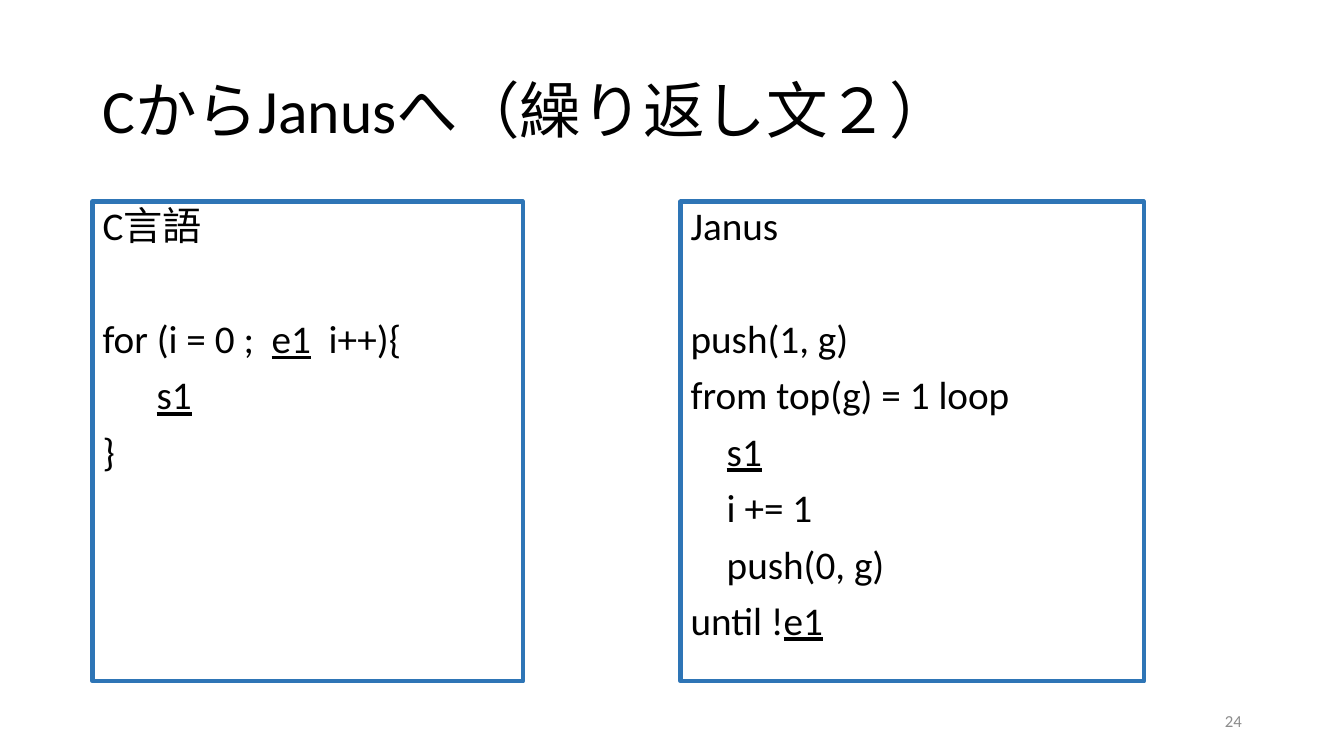
from lxml.etree import SubElement
from pptx import Presentation
from pptx.dml.color import RGBColor
from pptx.enum.text import MSO_ANCHOR as Anchor, MSO_AUTO_SIZE as AutoSize, PP_ALIGN as Align
from pptx.oxml.ns import qn
from pptx.util import Cm, Pt

FONT = "Calibri"
BLACK, BLUE, GREY = "000000", "2E75B6", "8C8C8C"
TWO_CONTENT_LAYOUT = 3
PANEL_TOP, PANEL_HEIGHT = 5.08, 12.09
CODE_GAP = 50.5

C_LINES = [
    ("for (i = 0 ;  _e1_  i++){", 0),
    ("_s1_", 1.36),
    ("}", 0),
]
JANUS_LINES = [
    ("push(1, g)", 0),
    ("from top(g) = 1 loop", 0),
    ("_s1_", 0.91),
    ("i += 1", 0.91),
    ("push(0, g)", 0.91),
    ("until !_e1_", 0),
]


def color(hex_string):
    return RGBColor.from_string(hex_string)


def place(shape, left, top, width, height):
    shape.left, shape.top = Cm(left), Cm(top)
    shape.width, shape.height = Cm(width), Cm(height)


def write(paragraph, text, size=28, fill=BLACK, align=Align.LEFT, before=0, spacing=0.9):
    paragraph.alignment = align
    paragraph.line_spacing = spacing
    paragraph.space_before = Pt(before)
    for position, part in enumerate(text.split("_")):
        if part:
            run = paragraph.add_run()
            run.text = part
            run.font.name = FONT
            run.font.size = Pt(size)
            run.font.color.rgb = color(fill)
            run.font.underline = position % 2 == 1


def remove_bullet(paragraph, indent):
    properties = paragraph._p.get_or_add_pPr()
    properties.set("marL", str(Cm(indent)))
    properties.set("indent", "0")
    SubElement(properties, qn("a:buNone"))


def set_frame(shape, anchor):
    frame = shape.text_frame
    frame.word_wrap = True
    frame.auto_size = AutoSize.NONE
    frame.vertical_anchor = anchor
    return frame


def add_title(slide, text):
    title = slide.shapes.title
    place(title, 2.33, 1.01, 29.21, 3.68)
    write(set_frame(title, Anchor.MIDDLE).paragraphs[0], text, size=44)


def add_code_panel(placeholder, left, width, heading, lines):
    place(placeholder, left, PANEL_TOP, width, PANEL_HEIGHT)
    placeholder.line.color.rgb = color(BLUE)
    placeholder.line.width = Pt(3)
    frame = set_frame(placeholder, Anchor.TOP)
    for number, (text, indent) in enumerate([(heading, 0)] + lines):
        paragraph = frame.add_paragraph() if number else frame.paragraphs[0]
        write(paragraph, text, before=CODE_GAP if number == 1 else 10)
        remove_bullet(paragraph, indent)


def add_page_number(slide, text):
    box = slide.shapes.add_textbox(Cm(23.93), Cm(17.65), Cm(7.62), Cm(1.02))
    paragraph = set_frame(box, Anchor.MIDDLE).paragraphs[0]
    write(paragraph, text, size=12, fill=GREY, align=Align.RIGHT, spacing=1.0)


def main():
    presentation = Presentation()
    presentation.slide_width, presentation.slide_height = Cm(33.87), Cm(19.05)
    slide = presentation.slides.add_slide(presentation.slide_layouts[TWO_CONTENT_LAYOUT])
    add_title(slide, "CからJanusへ（繰り返し文２）")
    add_code_panel(slide.placeholders[1], 2.33, 10.85, "C言語", C_LINES)
    add_code_panel(slide.placeholders[2], 17.15, 11.68, "Janus", JANUS_LINES)
    add_page_number(slide, "24")
    presentation.save("out.pptx")


if __name__ == "__main__":
    main()
